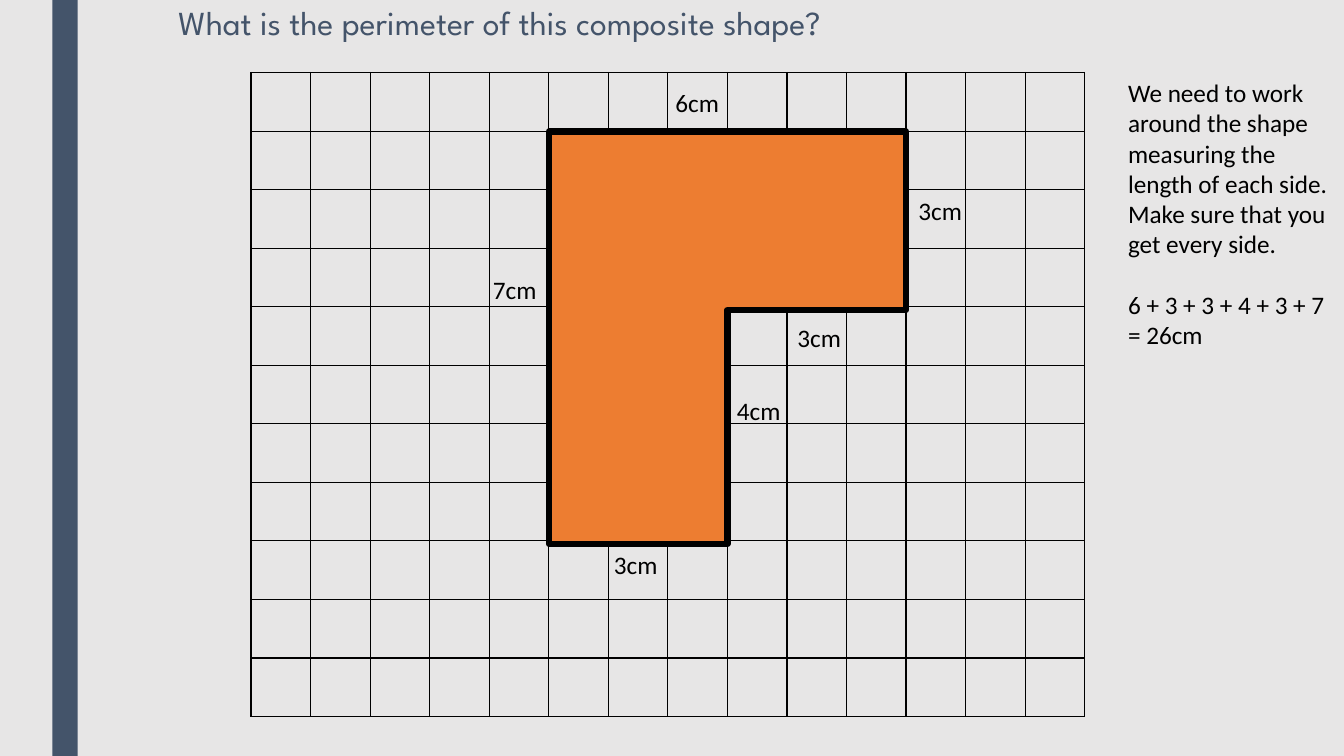
from lxml.etree import SubElement
from pptx import Presentation
from pptx.dml.color import RGBColor
from pptx.enum.shapes import MSO_SHAPE
from pptx.enum.text import MSO_ANCHOR, MSO_AUTO_SIZE, PP_ALIGN
from pptx.oxml.ns import qn
from pptx.util import Inches, Pt

GREY = RGBColor(0xE7, 0xE6, 0xE6)
SLATE = RGBColor(0x44, 0x54, 0x6A)
ORANGE = RGBColor(0xED, 0x7D, 0x31)
BLACK = RGBColor(0, 0, 0)


class Board:
    font = "Calibri"
    head = "League Spartan"
    size = Pt(18)

    def __init__(self, deck):
        self.slide = deck.slides.add_slide(deck.slide_layouts[5])
        back = self.slide.background.fill
        back.solid()
        back.fore_color.rgb = GREY

    def run(self, para, text, font, size, color):
        run = para.add_run()
        run.text = text
        run.font.name = font
        run.font.size = size
        run.font.color.rgb = color

    def title(self, text, *box):
        item = self.slide.shapes.title
        item.left, item.top, item.width, item.height = map(Inches, box)
        frame = item.text_frame
        frame.word_wrap = True
        frame.auto_size = MSO_AUTO_SIZE.NONE
        frame.vertical_anchor = MSO_ANCHOR.TOP
        para = frame.paragraphs[0]
        para.alignment = PP_ALIGN.LEFT
        para.line_spacing = 0.94
        para.space_before = Pt(10)
        para.space_after = Pt(2)
        self.run(para, text, self.head, Pt(24), SLATE)

    def shape(self, kind, fill, *box, edge=None, turn=0):
        item = self.slide.shapes.add_shape(kind, *map(Inches, box))
        item.shadow.inherit = False
        item.rotation = turn
        item.fill.solid()
        item.fill.fore_color.rgb = fill
        if edge:
            item.line.color.rgb = BLACK
            item.line.width = Pt(edge)
        else:
            item.line.fill.background()

    def text(self, lines, *box):
        frame = self.slide.shapes.add_textbox(*map(Inches, box)).text_frame
        frame.word_wrap = True
        frame.auto_size = MSO_AUTO_SIZE.SHAPE_TO_FIT_TEXT
        for spot, (line, gap) in enumerate(lines):
            para = frame.add_paragraph() if spot else frame.paragraphs[0]
            para.space_before = Pt(gap)
            self.run(para, line, self.font, self.size, BLACK)

    def grid(self, rows, cols, *box):
        table = self.slide.shapes.add_table(rows, cols, *map(Inches, box)).table
        table.first_row = table.horz_banding = False
        for cell in table.iter_cells():
            props = cell._tc.get_or_add_tcPr()
            for side in ("a:lnL", "a:lnR", "a:lnT", "a:lnB"):
                line = SubElement(props, qn(side), w=str(Pt(1)))
                fill = SubElement(line, qn("a:solidFill"))
                SubElement(fill, qn("a:srgbClr"), val=str(BLACK))
            cell.fill.background()


def main():
    deck = Presentation()
    deck.slide_width = Inches(13.33)
    deck.slide_height = Inches(7.5)
    board = Board(deck)
    board.shape(MSO_SHAPE.RECTANGLE, SLATE, 0.52, 0, 0.25, 7.5)
    board.title("What is the perimeter of this composite shape?", 1.67, 0, 10, 1.78)
    board.grid(11, 14, 2.49, 0.72, 8.27, 6.39)
    board.shape(MSO_SHAPE.CORNER, ORANGE, 5.17, 1.58, 4.09, 3.54, edge=4.5, turn=90)
    board.text(
        [
            ("We need to work around the shape measuring the length of each side.", 0),
            ("Make sure that you get every side.", 0),
            ("6 + 3 + 3 + 4 + 3 + 7 = 26cm", 21.6),
        ],
        11.09, 0.72, 2.24, 2.83,
    )
    sides = [
        ("3cm", 5.99, 5.4),
        ("3cm", 7.81, 3.15),
        ("3cm", 9.01, 1.89),
        ("4cm", 7.21, 3.87),
        ("6cm", 6.6, 0.82),
        ("7cm", 4.79, 2.67),
    ]
    for label, left, top in sides:
        board.text([(label, 0)], left, top, 0.85, 0.41)
    deck.save("out.pptx")


if __name__ == "__main__":
    main()
